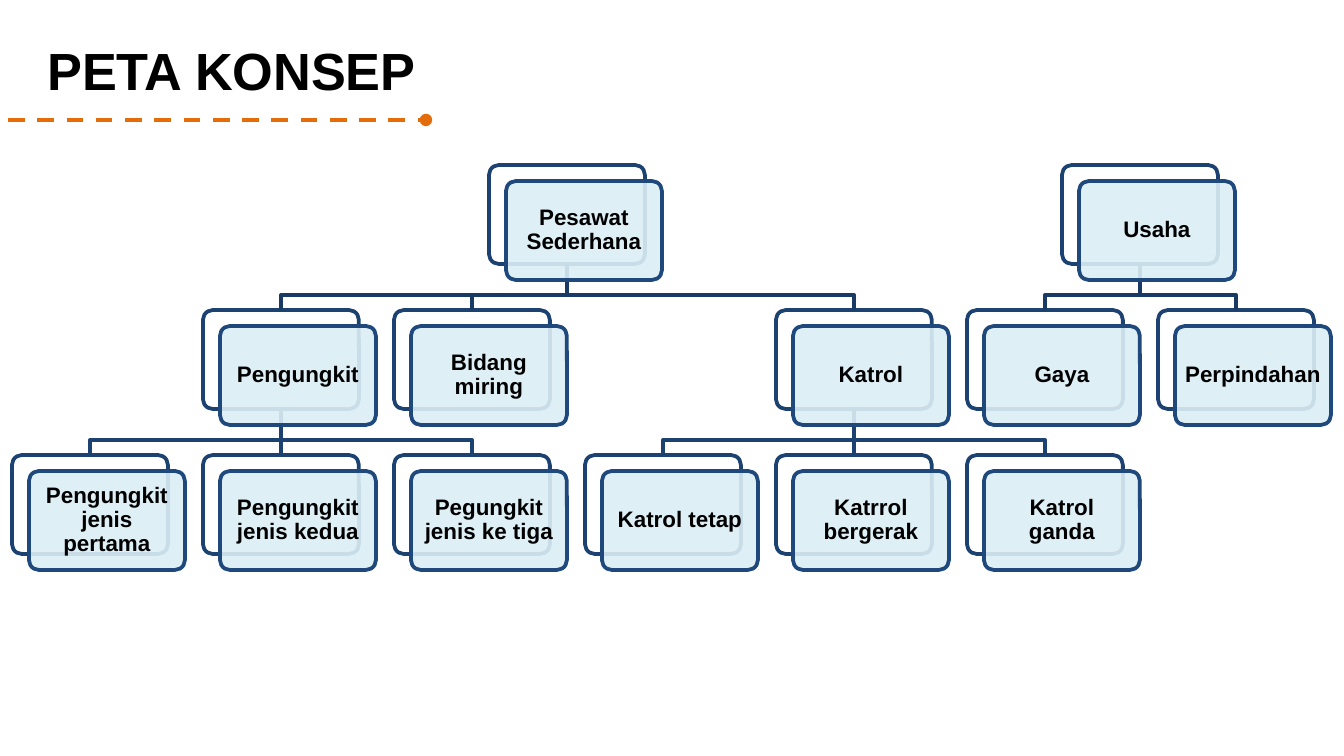
from lxml import etree
from pptx import Presentation
from pptx import util as u
from pptx.dml.color import RGBColor
from pptx.enum import dml, shapes, text
from pptx.oxml import ns

SCALE = 914400 / 134.4  # EMU in one px
BLACK = RGBColor(0x00, 0x00, 0x00)
WHITE = RGBColor(0xFF, 0xFF, 0xFF)
ORANGE = RGBColor(0xE4, 0x6C, 0x0A)
PALE_BLUE = RGBColor(0xDB, 0xEE, 0xF4)
FRONT_EDGE = RGBColor(0x1F, 0x49, 0x7D)
BACK_EDGE = RGBColor(0x1C, 0x42, 0x71)
LINK_COLORS = [RGBColor(0x19, 0x3A, 0x64), BACK_EDGE]

CARD_W, CARD_H = 156, 99
COLUMN_STEP, ROW_STEP = 191, 145
SHIFT_X, SHIFT_Y = 17, 16
ELBOW = 31  # drop from a parent card to the horizontal bar

# label: (column, row, parent)
CONCEPTS = {
    "Pesawat Sederhana": (2.5, 0, None),
    "Usaha": (5.5, 0, None),
    "Pengungkit": (1, 1, "Pesawat Sederhana"),
    "Bidang miring": (2, 1, "Pesawat Sederhana"),
    "Katrol": (4, 1, "Pesawat Sederhana"),
    "Gaya": (5, 1, "Usaha"),
    "Perpindahan": (6, 1, "Usaha"),
    "Pengungkit jenis pertama": (0, 2, "Pengungkit"),
    "Pengungkit jenis kedua": (1, 2, "Pengungkit"),
    "Pegungkit jenis ke tiga": (2, 2, "Pengungkit"),
    "Katrol tetap": (3, 2, "Katrol"),
    "Katrrol bergerak": (4, 2, "Katrol"),
    "Katrol ganda": (5, 2, "Katrol"),
}


def px(*lengths):
    return [u.Emu(round(length * SCALE)) for length in lengths]


def add_card(left, top, fill, edge):
    card = page.shapes.add_shape(
        shapes.MSO_SHAPE.ROUNDED_RECTANGLE, *px(left, top, CARD_W, CARD_H))
    card.adjustments[0] = 0.1
    card.shadow.inherit = False
    card.fill.solid()
    card.fill.fore_color.rgb = fill
    card.line.color.rgb = edge
    card.line.width = u.Pt(2)
    return card


deck = Presentation()
deck.slide_width, deck.slide_height = px(1344, 756)
page = deck.slides.add_slide(deck.slide_layouts[6])

# Title
title = page.shapes.add_textbox(*px(34, 32, 460, 77))
title.text_frame.word_wrap = True
span = title.text_frame.paragraphs[0].add_run()
span.text = "PETA KONSEP"
for name, value in {"name": "Arial", "size": u.Pt(28), "bold": True}.items():
    setattr(span.font, name, value)
span.font.color.rgb = BLACK

# Dashed rule with a round end
rule = page.shapes.add_connector(shapes.MSO_CONNECTOR.STRAIGHT, *px(8, 120, 426, 120))
rule.line.color.rgb = ORANGE
rule.line.width = u.Pt(2.25)
rule.line.dash_style = dml.MSO_LINE.DASH
etree.SubElement(rule.line._get_or_add_ln(), ns.qn("a:tailEnd"), type="oval")
etree.SubElement(rule._element.spPr, ns.qn("a:effectLst"))

# Back cards
places = {}
back_cards = {}
for label, (column, row, parent) in CONCEPTS.items():
    left, top = int(12 + column * COLUMN_STEP), 165 + row * ROW_STEP
    places[label] = left, top
    back_cards[label] = add_card(left, top, WHITE, BACK_EDGE)

# Links from parent to child: straight below, otherwise an elbow
for label, (column, row, parent) in CONCEPTS.items():
    if parent is None:
        continue
    end_x, end_y = places[label][0] + CARD_W // 2, places[label][1]
    start_x, start_y = places[parent][0] + CARD_W // 2, places[parent][1] + CARD_H
    if start_x == end_x:
        link = page.shapes.add_connector(
            shapes.MSO_CONNECTOR.STRAIGHT, *px(start_x, start_y, end_x, end_y))
        link.begin_connect(back_cards[parent], 2)
        link.end_connect(back_cards[label], 0)
    else:
        bar_y = start_y + ELBOW
        outline = page.shapes.build_freeform(start_x, start_y, scale=SCALE)
        outline.add_line_segments(
            [(start_x, bar_y), (end_x, bar_y), (end_x, end_y)], close=False)
        link = outline.convert_to_shape()
        link.fill.background()
    link.line.color.rgb = LINK_COLORS[row - 1]
    link.line.width = u.Pt(2)
    etree.SubElement(link._element.spPr, ns.qn("a:effectLst"))

# Front cards with the concept names
for label, (left, top) in places.items():
    card = add_card(left + SHIFT_X, top + SHIFT_Y, PALE_BLUE, FRONT_EDGE)
    color = card.fill._xPr.find(ns.qn("a:solidFill"))[0]
    etree.SubElement(color, ns.qn("a:alpha"), val="90000")
    frame = card.text_frame
    frame.word_wrap = True
    frame.vertical_anchor = text.MSO_ANCHOR.MIDDLE
    inset = px(6 if label == "Perpindahan" else 9)[0]
    for side in ("left", "top", "right", "bottom"):
        setattr(frame, f"margin_{side}", inset)
    para = frame.paragraphs[0]
    para.alignment = text.PP_ALIGN.CENTER
    para.line_spacing = 0.9
    span = para.add_run()
    span.text = label
    for name, value in {"name": "Arial", "size": u.Pt(12), "bold": True}.items():
        setattr(span.font, name, value)
    span.font.color.rgb = BLACK

deck.save("out.pptx")
